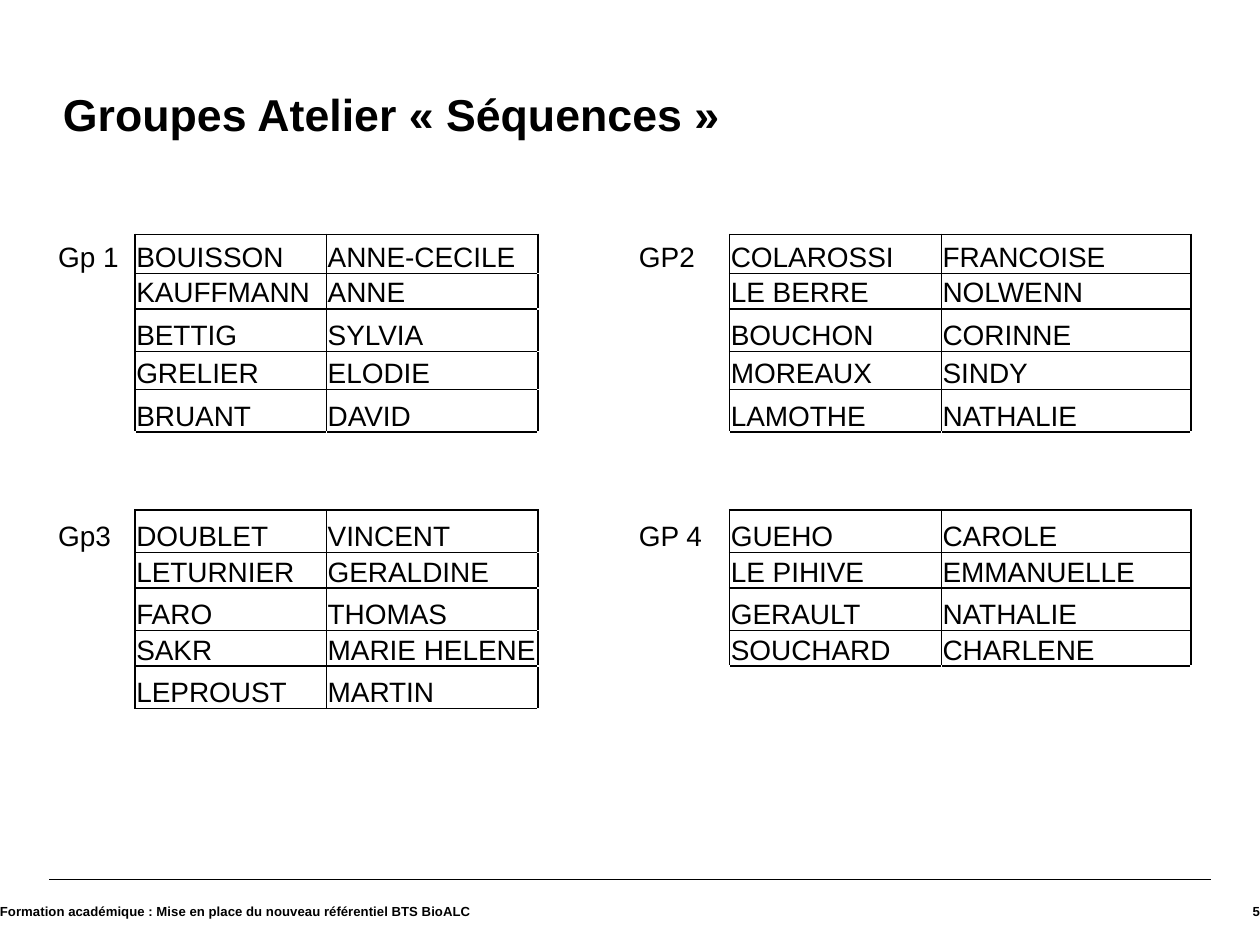
from dataclasses import dataclass
from itertools import product

from lxml import etree
from pptx import Presentation
from pptx import util as u
from pptx.dml.color import RGBColor
from pptx.enum import shapes, text
from pptx.oxml.ns import qn


@dataclass(frozen=True)
class Theme:
    font: str = "Arial"
    ink: str = "000000"
    paper: str = "FFFFFF"
    title: float = 25.5
    body: float = 16
    footer: float = 7.5
    rule: float = 0.8
    border: float = 1


@dataclass(frozen=True)
class Label:
    words: str
    left: float
    top: float
    width: float
    height: float
    size: float
    align: text.PP_ALIGN = text.PP_ALIGN.LEFT
    spacing: float = 1.0


@dataclass(frozen=True)
class Group:
    name: str
    row: int
    column: int
    members: tuple[tuple[str, str], ...]


THEME = Theme()

LABELS = (
    Label("Groupes Atelier «\u00a0Séquences\u00a0»".replace("\u00a0", chr(160)),
          36, 21.6, 648, 90, THEME.title, spacing=0.9),
    Label("5", 613.44, 501.84, 106.56, 38.16, THEME.footer, text.PP_ALIGN.RIGHT),
    Label("Formation académique : Mise en place du nouveau référentiel BTS BioALC",
          0, 501.84, 465.12, 38.16, THEME.footer),
)

GROUPS = (
    Group("Gp 1", 0, 0, (
        ("BOUISSON", "ANNE-CECILE"), ("KAUFFMANN", "ANNE"), ("BETTIG", "SYLVIA"),
        ("GRELIER", "ELODIE"), ("BRUANT", "DAVID"))),
    Group("GP2", 0, 4, (
        ("COLAROSSI", "FRANCOISE"), ("LE BERRE", "NOLWENN"), ("BOUCHON", "CORINNE"),
        ("MOREAUX", "SINDY"), ("LAMOTHE", "NATHALIE"))),
    Group("Gp3", 7, 0, (
        ("DOUBLET", "VINCENT"), ("LETURNIER", "GERALDINE"), ("FARO", "THOMAS"),
        ("SAKR", "MARIE HELENE"), ("LEPROUST", "MARTIN"))),
    Group("GP 4", 7, 4, (
        ("GUEHO", "CAROLE"), ("LE PIHIVE", "EMMANUELLE"), ("GERAULT", "NATHALIE"),
        ("SOUCHARD", "CHARLENE"))),
)

COLUMN_WIDTHS = (44.6, 109.4, 121, 56.9, 52.5, 121, 142.6)
TALL, SHORT = 24.4, 20.2
ROW_HEIGHTS = (22.4, SHORT, TALL, 21.6, TALL) + (TALL, SHORT) * 3 + (TALL,)
EDGES = {"a:lnL": (0, -1), "a:lnR": (0, 1), "a:lnT": (-1, 0), "a:lnB": (1, 0)}


def style_font(font, size: float, bold: bool) -> None:
    font.name = THEME.font
    font.size = u.Pt(size)
    font.bold = bold
    font.color.rgb = RGBColor.from_string(THEME.ink)


def add_label(page, label: Label) -> None:
    box = page.shapes.add_textbox(*map(u.Pt, (label.left, label.top, label.width, label.height)))
    frame = box.text_frame
    frame.word_wrap = True
    frame.vertical_anchor = text.MSO_ANCHOR.MIDDLE
    frame.margin_left = frame.margin_right = frame.margin_top = frame.margin_bottom = 0
    para = frame.paragraphs[0]
    para.text = label.words
    para.alignment = label.align
    para.line_spacing = label.spacing
    style_font(para.font, label.size, True)


def add_rule(page) -> None:
    line = page.shapes.add_connector(
        shapes.MSO_CONNECTOR.STRAIGHT, *map(u.Pt, (28.08, 502.56, 691.92, 502.56)))
    line.line.color.rgb = RGBColor.from_string(THEME.ink)
    line.line.width = u.Pt(THEME.rule)
    etree.SubElement(line._element.spPr, qn("a:effectLst"))


def add_border(cell, edge: str, color: str) -> None:
    line = etree.SubElement(cell._tc.get_or_add_tcPr(), qn(edge), w=str(u.Pt(THEME.border)))
    fill = etree.SubElement(line, qn("a:solidFill"))
    etree.SubElement(fill, qn("a:srgbClr"), val=color)


def fill_cell(cell, words: str) -> None:
    cell.margin_left = cell.margin_right = cell.margin_top = u.Pt(0.7)
    cell.margin_bottom = 0
    cell.vertical_anchor = text.MSO_ANCHOR.BOTTOM
    para = cell.text_frame.paragraphs[0]
    if words:
        para.text = words
    else:
        etree.SubElement(para._p, qn("a:endParaRPr"), sz=str(int(THEME.body * 100)))
    style_font(para.font, THEME.body, False)


def add_groups(page, groups: tuple[Group, ...]) -> None:
    names: dict[tuple[int, int], str] = {}
    headings: dict[tuple[int, int], str] = {}
    for group in groups:
        headings[group.row, group.column] = group.name
        for row, member in enumerate(group.members, group.row):
            for column, name in enumerate(member, group.column + 1):
                names[row, column] = name

    rows, columns = len(ROW_HEIGHTS), len(COLUMN_WIDTHS)
    table = page.shapes.add_table(
        rows, columns, u.Pt(32.6), u.Pt(133.9),
        u.Pt(sum(COLUMN_WIDTHS)), u.Pt(sum(ROW_HEIGHTS))).table
    table.first_row = table.horz_banding = False
    for column, width in zip(table.columns, COLUMN_WIDTHS):
        column.width = u.Pt(width)
    for row, height in zip(table.rows, ROW_HEIGHTS):
        row.height = u.Pt(height)

    words = names | headings
    for row, column in product(range(rows), range(columns)):
        cell = table.cell(row, column)
        fill_cell(cell, words.get((row, column), ""))
        for edge, (down, across) in EDGES.items():
            framed = (row, column) in names or (row + down, column + across) in names
            add_border(cell, edge, THEME.ink if framed else THEME.paper)
        cell.fill.background()


def main() -> None:
    deck = Presentation()
    deck.slide_width, deck.slide_height = u.Pt(720), u.Pt(540)
    page = deck.slides.add_slide(deck.slide_layouts[6])
    add_rule(page)
    for label in LABELS:
        add_label(page, label)
    add_groups(page, GROUPS)
    deck.save("out.pptx")


if __name__ == "__main__":
    main()
